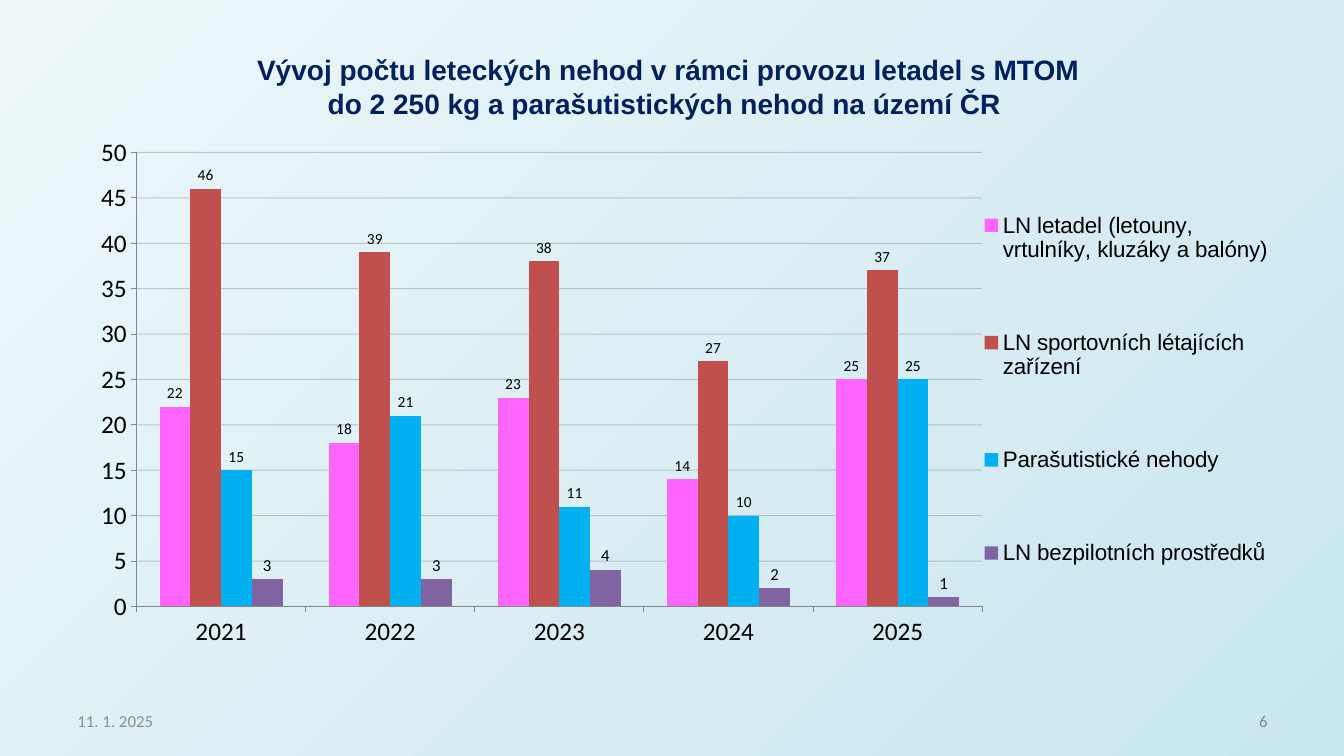
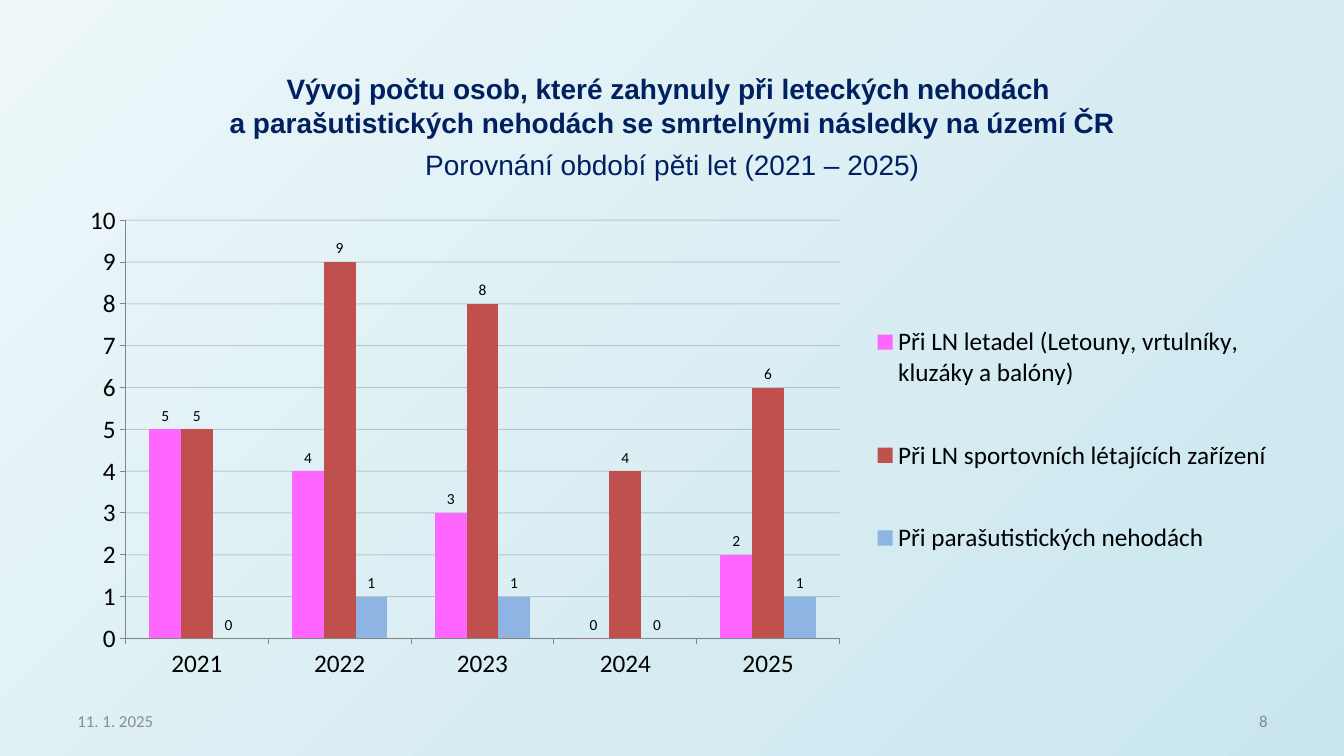
from pptx import Presentation
from pptx.chart.data import CategoryChartData
from pptx.dml.color import RGBColor
from pptx.enum.chart import XL_CHART_TYPE as ChartType, XL_LABEL_POSITION as LabelPos
from pptx.enum.chart import XL_LEGEND_POSITION as LegendPos, XL_TICK_MARK as Tick
from pptx.enum.text import MSO_ANCHOR as Anchor, MSO_AUTO_SIZE as AutoSize, PP_ALIGN as Align
from pptx.oxml import parse_xml
from pptx.oxml.ns import nsdecls, qn
from pptx.util import Inches, Pt

COLORS = {
    "bg_light": "EDF7F9", "bg_dark": "C9E6EE", "title": "002060", "text": "000000",
    "date": "8C8C8C", "number": "898989", "axis": "868686",
    "pink": "FF66FF", "red": "C0504D", "cyan": "00B0F0", "purple": "8064A2", "blue": "8EB4E3",
}
DATE = "11. 1. 2025"
YEARS = ["2021", "2022", "2023", "2024", "2025"]

SLIDES = [
    {
        "number": "6",
        "title": ["Vývoj počtu leteckých nehod v rámci provozu letadel s MTOM\v"
                  "do 2 250 kg a parašutistických nehod na území ČR "],
        "title_box": (2.22, 0.47, 8.82, 0.77),
        "chart_box": (0.67, 1.24, 12, 5.46),
        "plot": (0.057, 0.05, 0.699, 0.825),
        "legend": (0.75, 0.035, 0.25, 0.89),
        "legend_font": ("Arial", 16),
        "axis": (50, 5), "grid_alpha": 19,
        "series": [
            ("LN letadel (letouny, vrtulníky, kluzáky a balóny)", [22, 18, 23, 14, 25], "pink", 11),
            ("LN sportovních létajících zařízení", [46, 39, 38, 27, 37], "red", 11),
            ("Parašutistické nehody", [15, 21, 11, 10, 25], "cyan", 11),
            ("LN bezpilotních prostředků", [3, 3, 4, 2, 1], "purple", 12),
        ],
    },
    {
        "number": "8",
        "title": ["Vývoj počtu osob, které zahynuly při leteckých nehodách \v"
                  "a parašutistických nehodách se smrtelnými následky na území ČR",
                  "Porovnání období pěti let (2021 – 2025)"],
        "title_box": (0.67, 0.66, 12, 1.19),
        "chart_box": (0.67, 1.94, 12, 4.9),
        "plot": (0.048, 0.05, 0.59, 0.847),
        "legend": (0.66, 0.16, 0.34, 0.67),
        "legend_font": ("Calibri", 18),
        "axis": (10, 1), "grid_alpha": 17,
        "series": [
            ("Při LN letadel (Letouny, vrtulníky, kluzáky a balóny)", [5, 4, 3, 0, 2], "pink", 11),
            ("Při LN sportovních létajících zařízení", [5, 9, 8, 4, 6], "red", 11),
            ("Při parašutistických nehodách", [0, 1, 1, 0, 1], "blue", 11),
        ],
    },
]


def rgb(name):
    return RGBColor.from_string(COLORS[name])


def inches(box):
    return [Inches(v) for v in box]


def style_font(font, name, size, color="text", bold=False):
    font.name, font.size, font.bold = name, Pt(size), bold
    font.color.rgb = rgb(color)


def set_background(master):
    fill = master.background.fill
    fill.gradient()
    fill.gradient_angle = 315
    for stop, name in zip(fill.gradient_stops, ("bg_light", "bg_dark")):
        stop.color.rgb = rgb(name)


def add_title(s, paragraphs, box):
    sp = s.shapes.title
    sp.left, sp.top, sp.width, sp.height = inches(box)
    tf = sp.text_frame
    tf.word_wrap = True
    tf.auto_size = AutoSize.SHAPE_TO_FIT_TEXT
    tf.vertical_anchor = Anchor.TOP
    for i, text in enumerate(paragraphs):
        p = tf.add_paragraph() if i else tf.paragraphs[0]
        p.text = text
        p.alignment = Align.CENTER
        p.space_before = Pt(6 if i else 0)
        style_font(p.font, "Arial", 20, "title", bold=i == 0)


def add_footer(s, number):
    for text, left, align, color in ((DATE, 0.67, Align.LEFT, "date"),
                                     (number, 9.56, Align.RIGHT, "number")):
        tf = s.shapes.add_textbox(*inches((left, 6.95, 3.11, 0.4))).text_frame
        tf.word_wrap = True
        tf.vertical_anchor = Anchor.MIDDLE
        p = tf.paragraphs[0]
        p.text = text
        p.alignment = align
        style_font(p.font, "Calibri", 12, color)


def manual_layout(box, inner=False):
    target = '<c:layoutTarget val="inner"/>' if inner else ""
    modes = "".join(f'<c:{k}Mode val="edge"/>' for k in "xy")
    sizes = "".join(f'<c:{k} val="{v}"/>' for k, v in zip("xywh", box))
    return parse_xml(f'<c:layout {nsdecls("c")}><c:manualLayout>{target}{modes}{sizes}'
                     '</c:manualLayout></c:layout>')


def format_axes(chart, maximum, unit, grid_alpha):
    for axis in (chart.category_axis, chart.value_axis):
        axis.major_tick_mark = Tick.OUTSIDE
        axis.minor_tick_mark = Tick.NONE
        axis.format.line.color.rgb = rgb("axis")
        axis.format.line.width = Pt(0.75)
    value = chart.value_axis
    value.minimum_scale, value.maximum_scale, value.major_unit = 0, maximum, unit
    value.has_major_gridlines = True
    grid = value.major_gridlines.format.line
    grid.color.rgb = rgb("text")
    grid.width = Pt(0.75)
    clr = chart._chartSpace.xpath(".//c:majorGridlines//a:srgbClr")[0]
    clr.append(parse_xml(f'<a:alpha {nsdecls("a")} val="{grid_alpha * 1000}"/>'))


def add_column_chart(s, d):
    data = CategoryChartData(number_format="0")
    data.categories = YEARS
    for name, values, _, _ in d["series"]:
        data.add_series(name, values)
    chart = s.shapes.add_chart(ChartType.COLUMN_CLUSTERED, *inches(d["chart_box"]), data).chart
    chart.has_title = False
    style_font(chart.font, "Calibri", 18)
    format_axes(chart, *d["axis"], d["grid_alpha"])

    plot = chart.plots[0]
    plot.gap_width, plot.overlap = 150, 0
    plot.vary_by_categories = False
    for series, (_, _, color, size) in zip(plot.series, d["series"]):
        series.format.fill.solid()
        series.format.fill.fore_color.rgb = rgb(color)
        labels = series.data_labels
        labels.show_value = True
        labels.position = LabelPos.OUTSIDE_END
        style_font(labels.font, "Calibri", size)

    chart.has_legend = True
    legend = chart.legend
    legend.position = LegendPos.RIGHT
    legend.include_in_layout = False
    style_font(legend.font, *d["legend_font"])

    area = chart._chartSpace.xpath(".//c:plotArea")[0]
    for el in (area, legend._element):
        for old in el.findall(qn("c:layout")):
            el.remove(old)
    area.insert(0, manual_layout(d["plot"], inner=True))
    legend._element.find(qn("c:legendPos")).addnext(manual_layout(d["legend"]))


def main():
    prs = Presentation()
    prs.slide_width, prs.slide_height = Inches(13.33), Inches(7.5)
    set_background(prs.slide_master)
    for d in SLIDES:
        s = prs.slides.add_slide(prs.slide_layouts[5])
        add_footer(s, d["number"])
        add_title(s, d["title"], d["title_box"])
        add_column_chart(s, d)
    prs.save("out.pptx")


if __name__ == "__main__":
    main()
